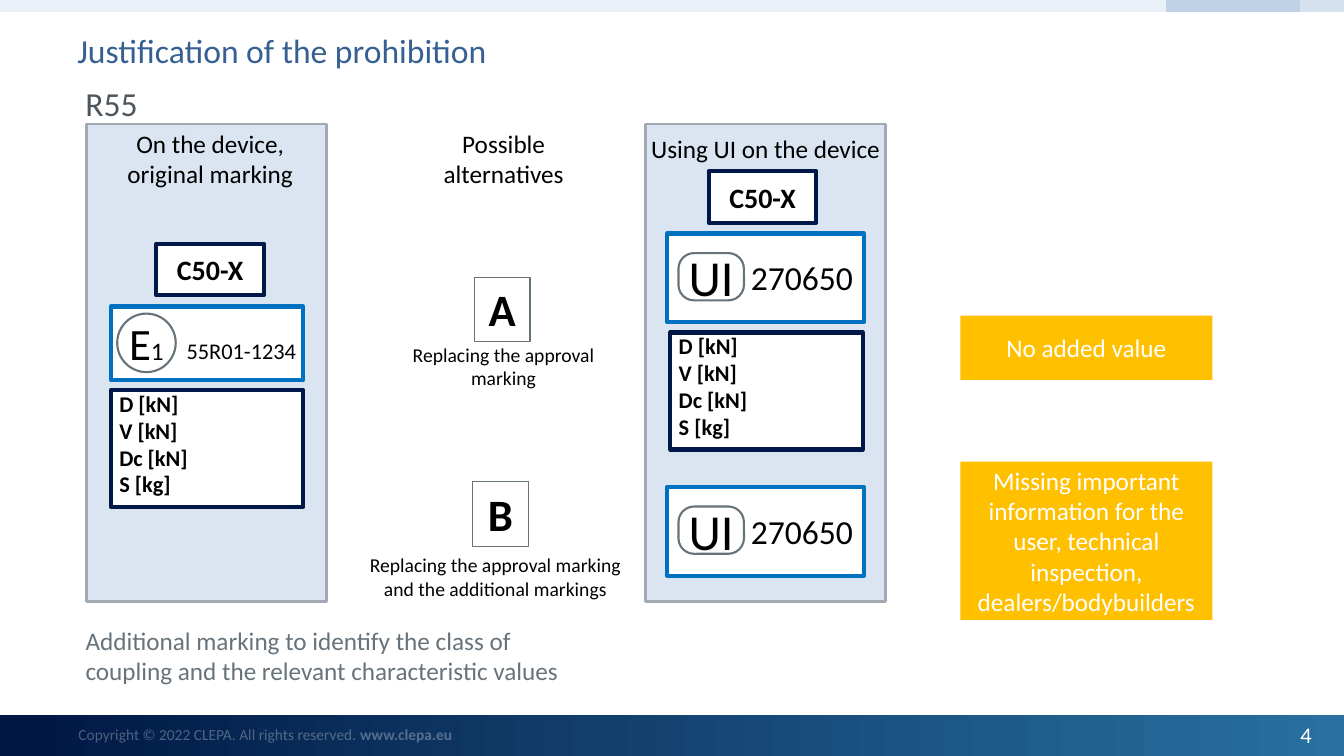
from lxml import etree
from pptx import Presentation
from pptx.dml.color import RGBColor
from pptx.enum.shapes import MSO_SHAPE
from pptx.enum.text import MSO_ANCHOR, MSO_AUTO_SIZE, PP_ALIGN
from pptx.oxml.ns import qn
from pptx.util import Pt

RECTANGLE = MSO_SHAPE.RECTANGLE
ROUNDED = MSO_SHAPE.ROUNDED_RECTANGLE
OVAL = MSO_SHAPE.OVAL
TOP, MIDDLE = MSO_ANCHOR.TOP, MSO_ANCHOR.MIDDLE
LEFT, CENTER, RIGHT = PP_ALIGN.LEFT, PP_ALIGN.CENTER, PP_ALIGN.RIGHT
NO_AUTOFIT = MSO_AUTO_SIZE.NONE

FONT = "Calibri"
WHITE = RGBColor(0xFF, 0xFF, 0xFF)
BLACK = RGBColor(0x00, 0x00, 0x00)
NAVY = RGBColor(0x00, 0x18, 0x48)
FOOTER_DARK = RGBColor(0x00, 0x16, 0x43)
FOOTER_LIGHT = RGBColor(0x28, 0x71, 0xA0)
BLUE = RGBColor(0x00, 0x70, 0xC0)
TITLE_BLUE = RGBColor(0x36, 0x60, 0x92)
PANEL_FILL = RGBColor(0xDB, 0xE5, 0xF1)
PANEL_LINE = RGBColor(0xA2, 0xA9, 0xB2)
STRIP_PALE = RGBColor(0xEA, 0xF0, 0xF7)
STRIP_MID = RGBColor(0xD5, 0xE1, 0xEF)
STRIP_DARK = RGBColor(0xBF, 0xD1, 0xE7)
DARK_GRAY = RGBColor(0x4D, 0x56, 0x5C)
GRAY = RGBColor(0x67, 0x73, 0x7A)
AMBER = RGBColor(0xFF, 0xC0, 0x00)

VALUES = "D [kN]\nV [kN]\nDc [kN]\nS [kg]"


def write(box, text, size, color=BLACK, bold=False, align=CENTER, anchor=TOP, wrap=True):
    frame = box.text_frame
    frame.text = text
    frame.auto_size = NO_AUTOFIT
    frame.word_wrap = wrap
    frame.vertical_anchor = anchor
    for para in frame.paragraphs:
        para.alignment = align
        for span in para.runs:
            span.font.name = FONT
            span.font.size = Pt(size)
            span.font.bold = bold
            span.font.color.rgb = color


def set_insets(box, left, top):
    frame = box.text_frame
    frame.margin_left, frame.margin_top = Pt(left), Pt(top)
    frame.margin_right = frame.margin_bottom = Pt(0)


def add_box(page, place, fill=None, line=None, weight=1, kind=RECTANGLE):
    box = page.shapes.add_shape(kind, *map(Pt, place))
    box.shadow.inherit = False
    if fill is None:
        box.fill.background()
    else:
        box.fill.solid()
        box.fill.fore_color.rgb = fill
    if line is None:
        box.line.fill.background()
    else:
        box.line.color.rgb = line
        box.line.width = Pt(weight)
    return box


def add_label(page, place, text, size, **style):
    box = page.shapes.add_textbox(*map(Pt, place))
    write(box, text, size, **style)
    return box


def add_strip(page):
    for left, width, color in [(0, 833, STRIP_PALE), (833, 96, STRIP_DARK), (929, 31, STRIP_MID)]:
        add_box(page, (left, 0, width, 8.5), color)


def add_footer(page):
    band = add_box(page, (0, 510.5, 960, 29.5), WHITE)
    band.fill.gradient()
    band.fill.gradient_angle = 0
    for stop, color in zip(band.fill.gradient_stops, (FOOTER_DARK, FOOTER_LIGHT)):
        stop.color.rgb = color
    notice = add_label(page, (49, 514, 302, 21), "Copyright © 2022 CLEPA. All rights reserved. ",
                       11, color=WHITE, align=LEFT, anchor=MIDDLE)
    para = notice.text_frame.paragraphs[0]
    address = para.add_run()
    address.text = "www.clepa.eu"
    address.font.name = FONT
    address.font.size = Pt(11)
    address.font.bold = True
    address.font.color.rgb = WHITE
    for color in notice.element.iter(qn("a:srgbClr")):
        etree.SubElement(color, qn("a:alpha"), val="30000")
    add_label(page, (892, 510, 52, 29), "4", 16, color=WHITE, align=RIGHT, anchor=MIDDLE)


def add_title(page, text):
    title = page.shapes.title
    title.left, title.top, title.width, title.height = map(Pt, (48, 18, 755, 33))
    title.fill.solid()
    title.fill.fore_color.rgb = WHITE
    write(title, text, 24, color=TITLE_BLUE, align=LEFT)


def add_class_plate(page, left, top):
    plate = add_box(page, (left, top, 77, 36.7), WHITE, NAVY, 3)
    write(plate, "C50-X", 20, bold=True, anchor=MIDDLE, wrap=False)


def add_values_plate(page, left, top):
    plate = add_box(page, (left, top, 137.5, 83.5), WHITE, NAVY, 3)
    write(plate, VALUES, 16, bold=True, align=LEFT)
    set_insets(plate, 6, 0)


def add_approval_plate(page, left, top):
    add_box(page, (left, top, 137.5, 52.6), WHITE, BLUE, 3)
    circle = add_box(page, (left + 4.5, top + 5, 41.8, 41.8), line=GRAY, weight=1.5, kind=OVAL)
    write(circle, "E", 32, anchor=MIDDLE, wrap=False)
    country = circle.text_frame.paragraphs[0].add_run()
    country.text = "1"
    country.font.name = FONT
    country.font.size = Pt(18)
    country.font.color.rgb = BLACK
    number = add_label(page, (left + 47, top + 7.2, 114.5, 34.6), "55R01-1234", 16, align=LEFT)
    number.text_frame.paragraphs[0].line_spacing = Pt(30)


def add_identifier_plate(page, left, top):
    add_box(page, (left, top, 140.4, 63.4), WHITE, BLUE, 3)
    pill = add_box(page, (left + 8, top + 14, 46.8, 33.8), WHITE, GRAY, 1.5, ROUNDED)
    pill.adjustments[0] = 0.33
    write(pill, "UI", 36, anchor=MIDDLE, wrap=False)
    add_label(page, (left + 52.6, top + 13.3, 104.4, 36), "270650", 24, align=LEFT)


def add_alternative(page, letter, place, text, text_place):
    box = add_box(page, (*place, 39.6, 46.1), line=GRAY, weight=0.75)
    write(box, letter, 32, bold=True, wrap=False)
    add_label(page, text_place, text, 14)


def add_verdict(page, top, height, text):
    box = add_box(page, (686, top, 180, height), AMBER)
    write(box, text, 18, color=WHITE, anchor=MIDDLE)


def main():
    deck = Presentation()
    deck.slide_width, deck.slide_height = Pt(960), Pt(540)
    page = deck.slides.add_slide(deck.slide_layouts[5])
    add_strip(page)
    add_footer(page)
    add_title(page, "Justification of the prohibition")
    add_label(page, (54, 56, 60.5, 34), "R55", 24, color=DARK_GRAY, align=LEFT)

    for left in (62, 461):
        add_box(page, (left, 88.6, 171.4, 341.3), PANEL_FILL, PANEL_LINE, 2)
    add_label(page, (81.4, 88, 137.5, 51), "On the device,\noriginal marking", 18)
    add_label(page, (291, 88, 137.5, 51), "Possible alternatives", 18)
    add_label(page, (448.6, 92, 196.6, 29), "Using UI on the device", 18)

    add_class_plate(page, 111.6, 174.2)
    add_approval_plate(page, 79.2, 219)
    add_values_plate(page, 79.2, 278.6)

    add_alternative(page, "A", (339, 198), "Replacing the approval marking", (275.8, 241.2, 167.8, 41))
    add_alternative(page, "B", (337.7, 344), "Replacing the approval marking and the additional markings",
                    (252, 391.7, 203.8, 41))

    add_class_plate(page, 506.2, 122.4)
    for top in (166.8, 347.8):
        add_identifier_plate(page, 476.6, top)
    add_values_plate(page, 478.8, 237.6)

    add_verdict(page, 225.4, 46, "No added value")
    add_verdict(page, 329.8, 113, "Missing important information for the user, "
                "technical inspection, dealers/bodybuilders")
    add_label(page, (54, 442.8, 366.5, 51), "Additional marking to identify the class of coupling "
              "and the relevant characteristic values", 18, color=GRAY, align=LEFT)
    deck.save("out.pptx")


if __name__ == "__main__":
    main()
